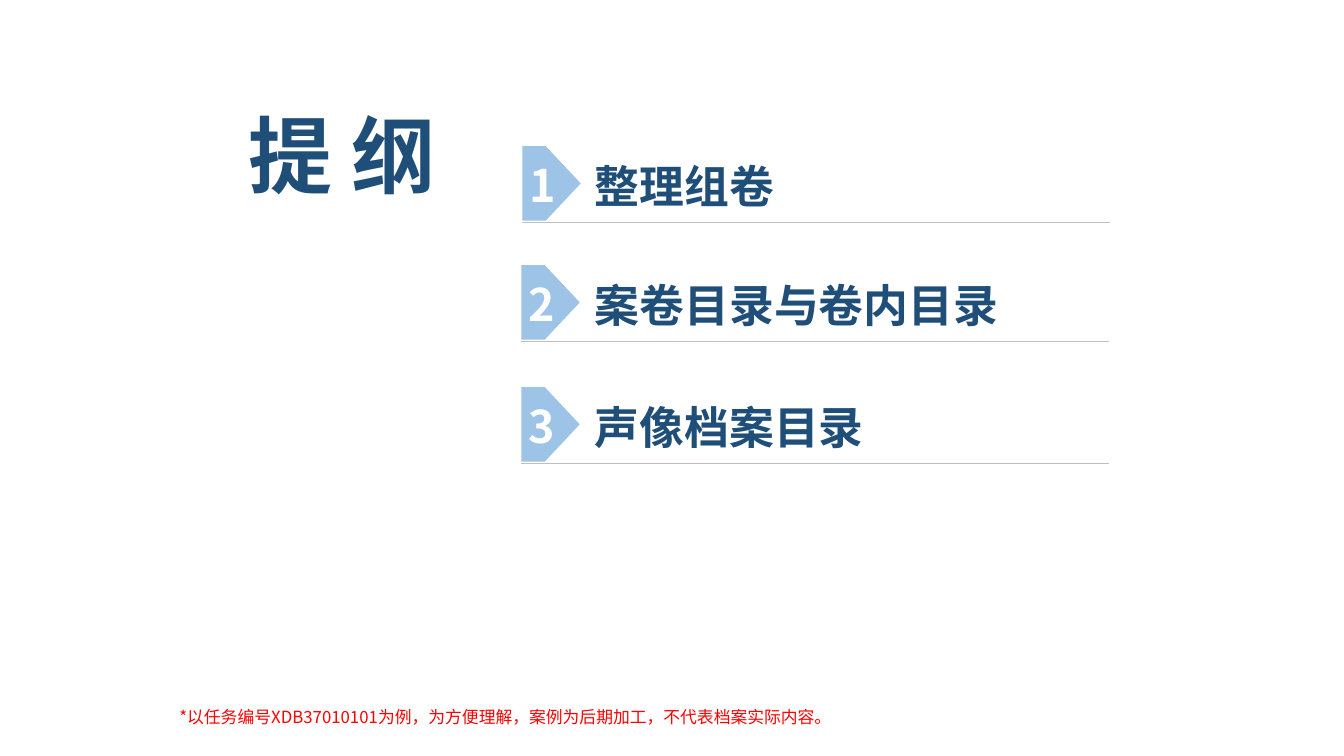
from lxml import etree
from pptx import Presentation
from pptx.dml.color import RGBColor
from pptx.enum.shapes import MSO_CONNECTOR, MSO_SHAPE
from pptx.enum.text import MSO_ANCHOR, MSO_AUTO_SIZE, PP_ALIGN
from pptx.oxml.ns import qn
from pptx.util import Inches, Pt

STRAIGHT = MSO_CONNECTOR.STRAIGHT
PENTAGON = MSO_SHAPE.PENTAGON
TOP = MSO_ANCHOR.TOP
GROW = MSO_AUTO_SIZE.SHAPE_TO_FIT_TEXT
LEFT = PP_ALIGN.LEFT

FONT = "Noto Sans CJK SC"
COLORS = {
    "navy": "1F4E79",
    "sky": "9DC3E6",
    "white": "FFFFFF",
    "gray": "BFBFBF",
    "red": "FF0000",
}
TOPICS = [
    ("整理组卷", 5.18, 1.45),
    ("案卷目录与卷内目录", 5.17, 2.63),
    ("声像档案目录", 5.17, 3.84),
]
NOTE = "*以任务编号XDB37010101为例，为方便理解，案例为后期加工，不代表档案实际内容。"


def rgb(name):
    return RGBColor.from_string(COLORS[name])


def box(left, top, width, height):
    return [Inches(n) for n in (left, top, width, height)]


def fill_text(frame, text, size, color, bold=True, spacing=None):
    """Write one left-aligned run, with the font set for Latin and CJK."""
    frame.word_wrap = True
    frame.vertical_anchor = TOP
    para = frame.paragraphs[0]
    para.alignment = LEFT
    if spacing:
        para.line_spacing = spacing
    run = para.add_run()
    run.text = text
    font = run.font
    font.name, font.size, font.bold = FONT, Pt(size), bold
    font.color.rgb = rgb(color)
    east = etree.SubElement(font._element, qn("a:ea"))
    east.set("typeface", FONT)


def add_label(shapes, area, text, size, color, **style):
    frame = shapes.add_textbox(*box(*area)).text_frame
    fill_text(frame, text, size, color, **style)
    frame.auto_size = GROW


def add_title(slide, text):
    title = slide.shapes.title
    title.left, title.top, title.width, title.height = box(2.36, 1.56, 2.28, 0.62)
    title.text_frame.auto_size = MSO_AUTO_SIZE.NONE
    fill_text(title.text_frame, text, 60, "navy", spacing=Pt(30.2))


def add_tag(slide, number, left, top):
    """Group a pointed tag with its number."""
    group = slide.shapes.add_group_shape()
    tag = group.shapes.add_shape(PENTAGON, *box(left, top, 0.58, 0.74))
    tag.adjustments[0] = 0.6
    tag.shadow.inherit = False
    tag.fill.solid()
    tag.fill.fore_color.rgb = rgb("sky")
    tag.line.fill.background()
    add_label(group.shapes, (left - 0.03, top + 0.07, 0.42, 0.64),
              str(number), 32, "white")


def add_rule(slide, left, top):
    start, level, end = Inches(left), Inches(top), Inches(left + 5.83)
    rule = slide.shapes.add_connector(STRAIGHT, start, level, end, level)
    rule.line.color.rgb = rgb("gray")
    rule.line.width = Pt(1)
    etree.SubElement(rule._element.spPr, qn("a:effectLst"))


def add_topic(slide, number, text, left, top):
    add_label(slide.shapes, (5.8, top + 0.08, 5.51, 0.64), text, 32, "navy")
    add_tag(slide, number, left, top)
    add_rule(slide, left, top + 0.76)


def main():
    deck = Presentation()
    deck.slide_width, deck.slide_height = Inches(13.33), Inches(7.5)
    slide = deck.slides.add_slide(deck.slide_layouts[5])
    add_title(slide, "提 纲")
    for number, (text, left, top) in enumerate(TOPICS, 1):
        add_topic(slide, number, text, left, top)
    add_label(slide.shapes, (1.68, 6.9, 8.85, 0.34), NOTE, 12, "red",
              bold=False, spacing=1.3)
    deck.save("out.pptx")


if __name__ == "__main__":
    main()
